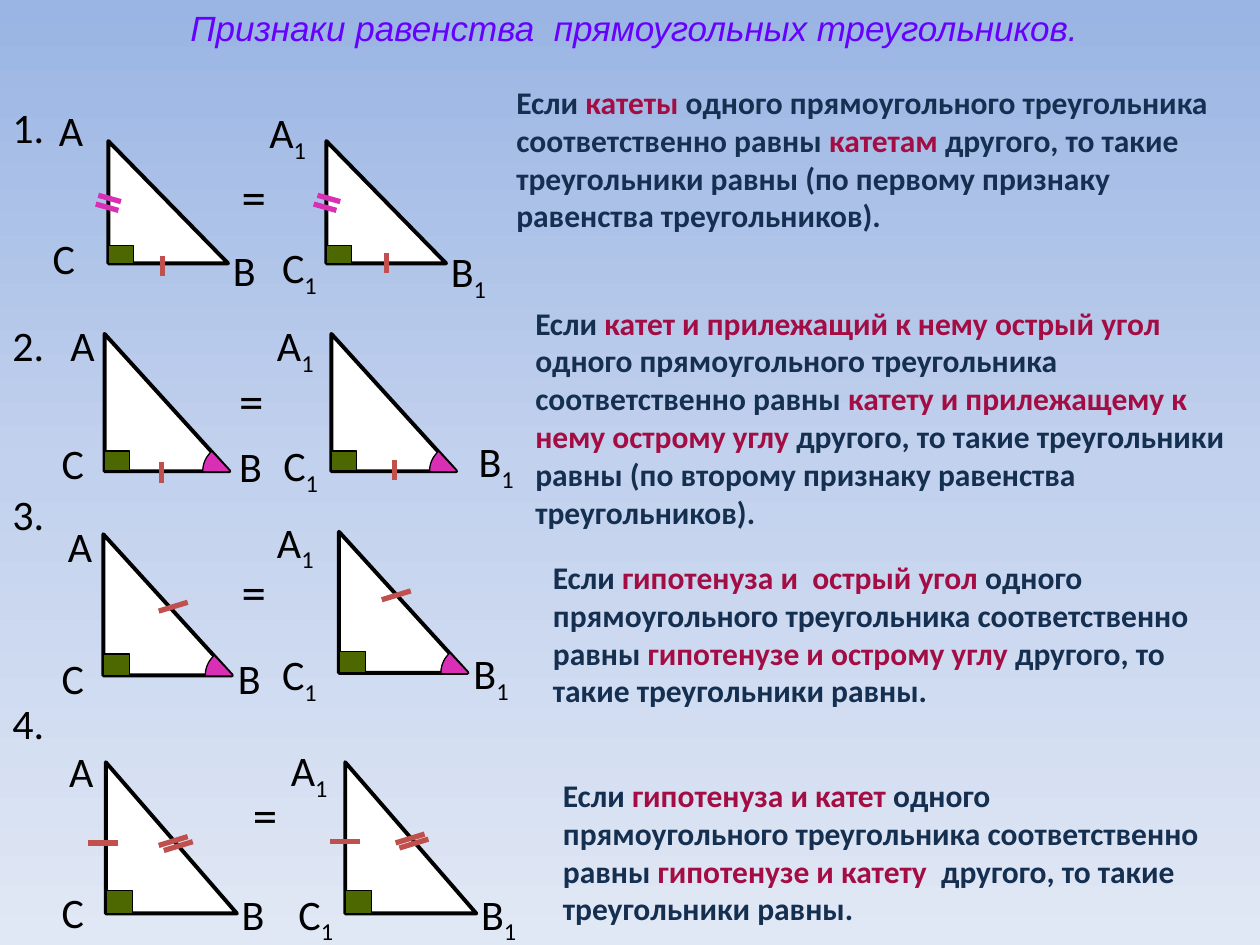
import math
from copy import deepcopy
from dataclasses import dataclass

from lxml import etree
from pptx import Presentation
from pptx.dml.color import RGBColor
from pptx.enum.shapes import MSO_CONNECTOR, MSO_SHAPE
from pptx.enum.text import PP_ALIGN
from pptx.oxml.ns import qn
from pptx.util import Inches, Pt

STRAIGHT = MSO_CONNECTOR.STRAIGHT
RIGHT_TRIANGLE = MSO_SHAPE.RIGHT_TRIANGLE
RECTANGLE = MSO_SHAPE.RECTANGLE
CENTER = PP_ALIGN.CENTER


@dataclass(frozen=True)
class Theme:
    background: tuple = ("9AB5E4", "C2D1ED", "E1E8F5")
    title: str = "6600FF"
    ink: str = "000000"
    paper: str = "FFFFFF"
    body: str = "142F50"
    accent: str = "A30D43"
    corner: str = "4D6800"
    angle: str = "D92FB5"
    tick: str = "C0504D"
    title_font: str = "Arial"
    body_font: str = "Calibri"
    title_size: int = 20
    label_size: int = 24
    equals_size: int = 28
    body_size: int = 18


THEME = Theme()

# Tick marks: run, rise and colour
TICKS = {
    "base": (0, 0.16, THEME.tick),
    "leg": (0.24, 0, THEME.tick),
    "hypotenuse": (0.23, -0.07, THEME.tick),
    "pink": (0.18, 0.05, THEME.angle),
}

# Each row: number top, equals sign, triangle size, corner size,
# two triangles (left, top, label places for A, C, B, ticks) and a statement
ROWS = [
    dict(number=0.76, equals=(1.82, 1.27), size=(0.95, 0.97), corner=(0.2, 0.14), angle=False,
         triangles=[
             (0.86, 1.12, [(0.37, 0.78), (0.32, 1.8), (1.75, 1.89)],
              [("base", 1.29, 2.03), ("pink", 0.76, 1.62), ("pink", 0.78, 1.55)]),
             (2.59, 1.12, [(2.04, 0.8), (2.14, 1.87), (3.48, 1.9)],
              [("base", 3.07, 2.01), ("pink", 2.49, 1.62), ("pink", 2.52, 1.55)])],
         place=(4, 0.61, 6, 1.31),
         statement="Если *катеты* одного прямоугольного треугольника соответственно равны *катетам*"
                   " другого, то такие треугольники равны (по первому признаку равенства"
                   " треугольников)."),
    dict(number=2.49, equals=(1.8, 2.89), size=(0.99, 1.09), corner=(0.2, 0.16), angle=True,
         triangles=[
             (0.83, 2.65, [(0.46, 2.49), (0.39, 3.42), (1.8, 3.45)], [("base", 1.28, 3.67)]),
             (2.63, 2.65, [(2.1, 2.49), (2.15, 3.44), (3.7, 3.41)], [("base", 3.13, 3.65)])],
         place=(4.15, 2.36, 5.85, 1.92),
         statement="Если *катет и прилежащий к нему острый угол *одного прямоугольного треугольника"
                   " соответственно равны *катету и прилежащему к нему острому углу* другого, то"
                   " такие треугольники равны (по второму признаку равенства треугольников)."),
    dict(number=3.83, equals=(1.82, 4.41), size=(1.02, 1.12), corner=(0.21, 0.17), angle=True,
         triangles=[
             (0.82, 4.24, [(0.44, 4.08), (0.39, 5.13), (1.79, 5.13)], [("hypotenuse", 1.26, 4.85)]),
             (2.69, 4.22, [(2.1, 4.05), (2.14, 5.1), (3.66, 5.09)], [("hypotenuse", 3.03, 4.76)])],
         place=(4.29, 4.38, 5.71, 1.31),
         statement="Если *гипотенуза и  острый угол *одного прямоугольного треугольника"
                   " соответственно равны *гипотенузе и острому углу *другого, то такие"
                   " треугольники равны."),
    dict(number=5.49, equals=(1.91, 6.18), size=(1.04, 1.2), corner=(0.21, 0.18), angle=False,
         triangles=[
             (0.84, 6.05, [(0.45, 5.87), (0.39, 6.99), (1.82, 7)],
              [("leg", 0.7, 6.69), ("hypotenuse", 1.26, 6.71), ("hypotenuse", 1.3, 6.75)]),
             (2.74, 6.05, [(2.21, 5.86), (2.27, 7), (3.72, 7)],
              [("leg", 2.62, 6.68), ("hypotenuse", 3.14, 6.69), ("hypotenuse", 3.17, 6.73)])],
         place=(4.37, 6.11, 5.26, 1.31),
         statement="Если *гипотенуза и катет *одного прямоугольного треугольника соответственно"
                   " равны *гипотенузе и катету  *другого, то такие треугольники равны."),
]


class SlideBuilder:
    def __init__(self, page, theme):
        self.page = page
        self.theme = theme

    def background(self):
        fill = self.page.background.fill
        fill.gradient()
        fill.gradient_angle = 270
        stops = next(self.page.element.iter(qn("a:gsLst")))
        stops.insert(1, deepcopy(stops[0]))
        for index, stop in enumerate(fill.gradient_stops):
            stop.position = index / 2
            stop.color.rgb = RGBColor.from_string(self.theme.background[index])

    def text(self, place, spans, size, font=None, wrap=True):
        """Add a text box; each span is a pair of words and colour."""
        box = self.page.shapes.add_textbox(*map(Inches, place))
        box.text_frame.word_wrap = wrap
        para = box.text_frame.paragraphs[0]
        for words, color in spans:
            span = para.add_run()
            span.text = words
            span.font.size = Pt(size)
            span.font.name = font or self.theme.body_font
            span.font.color.rgb = RGBColor.from_string(color)
        return para

    def title(self, words):
        para = self.text((0.27, 0, 9.53, 0.62), [(words, self.theme.title)],
                         self.theme.title_size, self.theme.title_font, wrap=False)
        para.alignment = CENTER
        para.runs[0].font.italic = True

    def label(self, left, top, words, index=""):
        spans = [(part, self.theme.ink) for part in (words, index) if part]
        width = 0.66 if len(words + index) > 1 else 0.4
        para = self.text((left, top, width, 0.5), spans, self.theme.label_size)
        if index:
            para.runs[1].font._element.set("baseline", "-25000")

    def equals(self, left, top):
        self.text((left, top, 0.37, 0.57), [("=", self.theme.ink)], self.theme.equals_size)

    def statement(self, place, marked):
        colors = (self.theme.body, self.theme.accent)
        spans = [(words, colors[i % 2]) for i, words in enumerate(marked.split("*"))]
        for span in self.text(place, spans, self.theme.body_size).runs:
            span.font.bold = True

    def paint(self, shape, fill=None, width=None):
        shape.shadow.inherit = False
        if fill:
            shape.fill.solid()
            shape.fill.fore_color.rgb = RGBColor.from_string(fill)
        else:
            shape.fill.background()
        if width:
            shape.line.color.rgb = RGBColor.from_string(self.theme.ink)
            shape.line.width = Pt(width)
        else:
            shape.line.fill.background()

    def shape(self, kind, place, fill, width):
        self.paint(self.page.shapes.add_shape(kind, *map(Inches, place)), fill, width)

    def outline(self, points, closed, **style):
        corners = [(Inches(x), Inches(y)) for x, y in points]
        builder = self.page.shapes.build_freeform(*corners[0])
        builder.add_line_segments(corners[1:], close=closed)
        self.paint(builder.convert_to_shape(), **style)

    def angle(self, x, y, radius=0.21, degrees=47):
        turns = [math.radians(degrees * step / 12) for step in range(13)]
        arc = [(x - radius * math.cos(t), y - radius * math.sin(t)) for t in turns]
        self.outline(arc + [(x, y)], True, fill=self.theme.angle)
        self.outline(arc, False, width=0.75)

    def tick(self, kind, x, y):
        run, rise, color = TICKS[kind]
        line = self.page.shapes.add_connector(STRAIGHT, *map(Inches, (x, y, x + run, y + rise)))
        line.line.color.rgb = RGBColor.from_string(color)
        line.line.width = Pt(3)
        etree.SubElement(line._element.spPr, qn("a:effectLst"))

    def triangle(self, left, top, size, corner, with_angle):
        right, bottom = left + size[0], top + size[1]
        self.shape(RIGHT_TRIANGLE, (left, top, *size), self.theme.paper, 2.25)
        self.shape(RECTANGLE, (left, bottom - corner[1], *corner), self.theme.corner, 0.75)
        if with_angle:
            self.angle(right, bottom)


def main():
    deck = Presentation()
    deck.slide_width, deck.slide_height = Inches(10), Inches(7.5)
    slide = SlideBuilder(deck.slides.add_slide(deck.slide_layouts[6]), THEME)
    slide.background()
    slide.title("Признаки равенства  прямоугольных треугольников.")

    # One congruence test per row
    for number, row in enumerate(ROWS, start=1):
        slide.label(0, row["number"], f"{number}.")
        for index, (left, top, labels, ticks) in zip(("", "1"), row["triangles"]):
            slide.triangle(left, top, row["size"], row["corner"], row["angle"])
            for letter, spot in zip("АCB", labels):
                slide.label(*spot, letter, index)
            for tick in ticks:
                slide.tick(*tick)
        slide.equals(*row["equals"])
        slide.statement(row["place"], row["statement"])

    deck.save("out.pptx")


if __name__ == "__main__":
    main()
